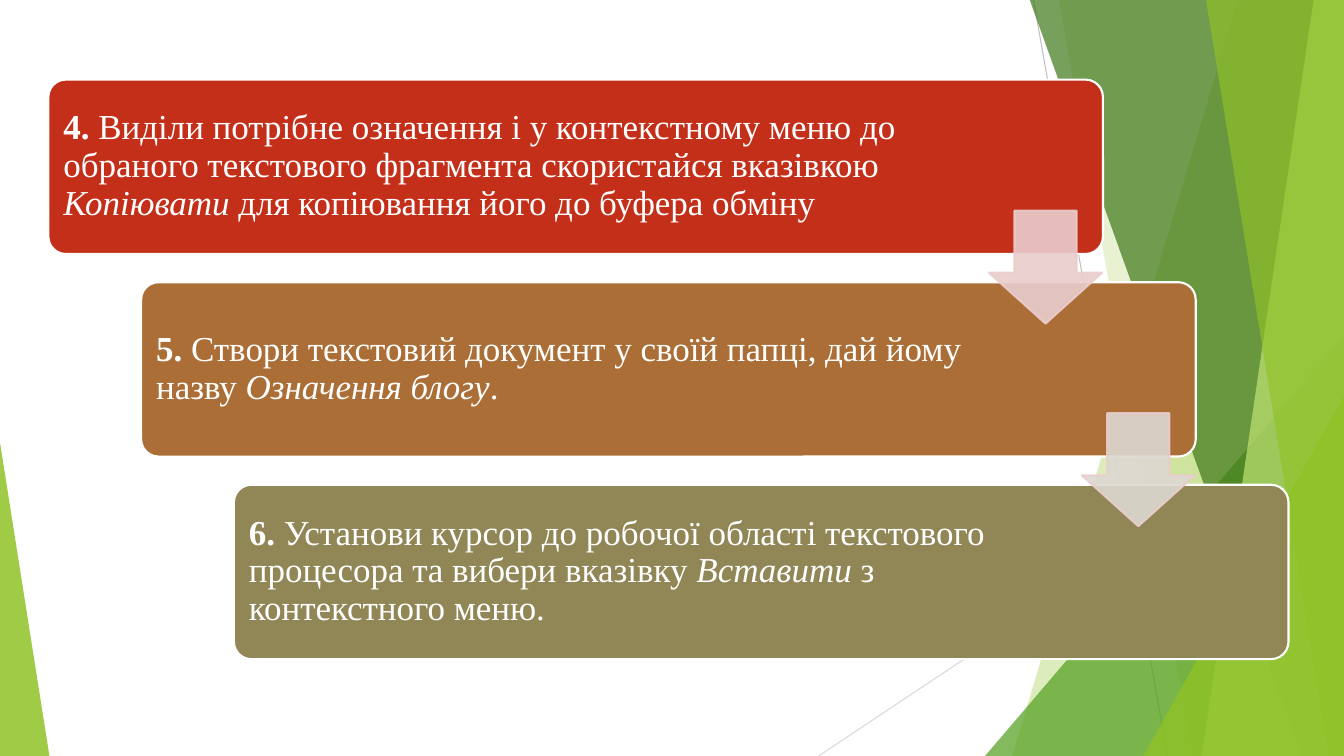
from dataclasses import dataclass

from lxml import etree
from pptx import Presentation
from pptx.dml.color import RGBColor
from pptx.enum.shapes import MSO_CONNECTOR, MSO_SHAPE
from pptx.enum.text import MSO_ANCHOR, PP_ALIGN
from pptx.oxml.ns import qn
from pptx.util import Inches, Pt

STRAIGHT = MSO_CONNECTOR.STRAIGHT
TRIANGLE = MSO_SHAPE.ISOSCELES_TRIANGLE
ROUNDED = MSO_SHAPE.ROUNDED_RECTANGLE
DOWN_ARROW = MSO_SHAPE.DOWN_ARROW
MIDDLE = MSO_ANCHOR.MIDDLE
LEFT = PP_ALIGN.LEFT

WIDTH, HEIGHT = 13.33, 7.5
FACET_TOP = -0.01


@dataclass(frozen=True)
class Theme:
    font: str = "Times New Roman"
    text_size: float = 25
    outline: float = 1.5
    hairline: float = 0.75
    white: str = "FFFFFF"
    gray: str = "BFBFBF"
    light_gray: str = "D9D9D9"
    lime: str = "90C226"
    pale_lime: str = "C0E474"
    green: str = "54A021"
    dark_green: str = "3F7819"
    red: str = "C42F1A"
    brown: str = "AB6E37"
    olive: str = "918655"
    pink: str = "EACDCD"
    stone: str = "DCD9D1"


def paint(fill, color, opacity=100):
    """Make a fill solid, with opacity in percent."""
    fill.solid()
    fill.fore_color.rgb = RGBColor.from_string(color)
    if opacity < 100:
        color_element = fill._xPr.find(qn("a:solidFill"))[0]
        etree.SubElement(color_element, qn("a:alpha"), val=str(opacity * 1000))


def add_run(paragraph, text, *, font, size, color, bold=False, italic=False):
    run = paragraph.add_run()
    run.text = text
    run.font.name = font
    run.font.size = Pt(size)
    run.font.bold = bold
    run.font.italic = italic
    run.font.color.rgb = RGBColor.from_string(color)


class SlideBuilder:
    def __init__(self, slide, theme):
        self.slide = slide
        self.theme = theme

    def finish(self, shape, color, opacity=100, line=None):
        shape.shadow.inherit = False
        paint(shape.fill, color, opacity)
        if line is None:
            shape.line.fill.background()
        else:
            shape.line.width = Pt(self.theme.outline)
            paint(shape.line.fill, line, opacity)

    def line(self, start, end, color):
        connector = self.slide.shapes.add_connector(
            STRAIGHT, *map(Inches, (*start, *end)))
        connector.line.width = Pt(self.theme.hairline)
        paint(connector.line.fill, color)
        etree.SubElement(connector._element.spPr, qn("a:effectLst"))

    def facet(self, top_x, bottom_x, color, opacity):
        """Fill from a slanted left edge to the right edge of the slide."""
        corners = [(top_x, FACET_TOP), (WIDTH, FACET_TOP),
                   (WIDTH, HEIGHT), (bottom_x, HEIGHT)]
        points = [(Inches(x), Inches(y)) for x, y in corners]
        builder = self.slide.shapes.build_freeform(*points[0], scale=1.0)
        builder.add_line_segments(points[1:], close=True)
        self.finish(builder.convert_to_shape(), color, opacity)

    def shape(self, kind, box, adjustments, color, opacity=100, line=None):
        shape = self.slide.shapes.add_shape(kind, *map(Inches, box))
        for index, value in enumerate(adjustments):
            shape.adjustments[index] = value
        self.finish(shape, color, opacity, line)

    def text(self, box, parts):
        """Write one paragraph from (text, run format) pairs."""
        frame = self.slide.shapes.add_textbox(*map(Inches, box)).text_frame
        frame.word_wrap = True
        frame.vertical_anchor = MIDDLE
        frame.margin_left = frame.margin_right = Inches(0.1)
        frame.margin_top = frame.margin_bottom = Inches(0.1)
        paragraph = frame.paragraphs[0]
        paragraph.alignment = LEFT
        paragraph.line_spacing = 0.9
        for text, style in parts:
            add_run(paragraph, text, font=self.theme.font,
                    size=self.theme.text_size, color=self.theme.white, **style)


def draw_background(builder):
    theme = builder.theme
    builder.line((10.25, 0), (11.58, HEIGHT), theme.gray)
    builder.line((WIDTH, 4.03), (8.12, HEIGHT), theme.light_gray)
    builder.facet(12.28, 10.04, theme.lime, 30)
    builder.facet(10.5, 11.83, theme.lime, 20)
    builder.shape(TRIANGLE, (9.77, 3.33, 3.56, 4.17), [1], theme.green, 72)
    builder.facet(10.21, 12.91, theme.dark_green, 70)
    builder.facet(13.03, 11.92, theme.pale_lime, 70)
    builder.facet(11.96, 13.18, theme.lime, 65)
    builder.shape(TRIANGLE, (11.34, 3.93, 1.99, 3.57), [1], theme.lime, 80)
    builder.shape(TRIANGLE, (0, 4.39, 0.49, 3.11), [0], theme.lime, 85)


def draw_steps(builder):
    theme = builder.theme
    bold, plain, italic = {"bold": True}, {}, {"italic": True}
    steps = [
        (theme.red, 8.59, [
            ("4. ", bold),
            ("Виділи потрібне означення і у контекстному меню до обраного "
             "текстового фрагмента скористайся вказівкою ", plain),
            ("Копіювати ", italic),
            ("для копіювання його до буфера обміну", plain)]),
        (theme.brown, 8.31, [
            ("5. ", bold),
            ("Створи текстовий документ у своїй папці, дай йому назву ", plain),
            ("Означення блогу", italic),
            (".", plain)]),
        (theme.olive, 8.31, [
            ("6. ", bold),
            ("Установи курсор до робочої області текстового процесора та "
             "вибери вказівку ", plain),
            ("Вставити ", italic),
            ("з контекстного меню.", plain)]),
    ]
    step_x, step_y, inset = 0.92, 2.01, 0.05
    for index, (color, text_width, parts) in enumerate(steps):
        left, top = 0.48 + index * step_x, 0.79 + index * step_y
        builder.shape(ROUNDED, (left, top, 10.46, 1.73), [0.1], color,
                      line=theme.white)
        builder.text((left + inset, top + inset, text_width, 1.62), parts)
    for index, color in enumerate([theme.pink, theme.stone]):
        box = (9.81 + index * step_x, 2.09 + index * step_y, 1.12, 1.12)
        builder.shape(DOWN_ARROW, box, [0.55, 0.45], color, 90, theme.pink)


def main():
    presentation = Presentation()
    presentation.slide_width = Inches(WIDTH)
    presentation.slide_height = Inches(HEIGHT)
    slide = presentation.slides.add_slide(presentation.slide_layouts[6])
    builder = SlideBuilder(slide, Theme())
    draw_background(builder)
    draw_steps(builder)
    presentation.save("out.pptx")


if __name__ == "__main__":
    main()
